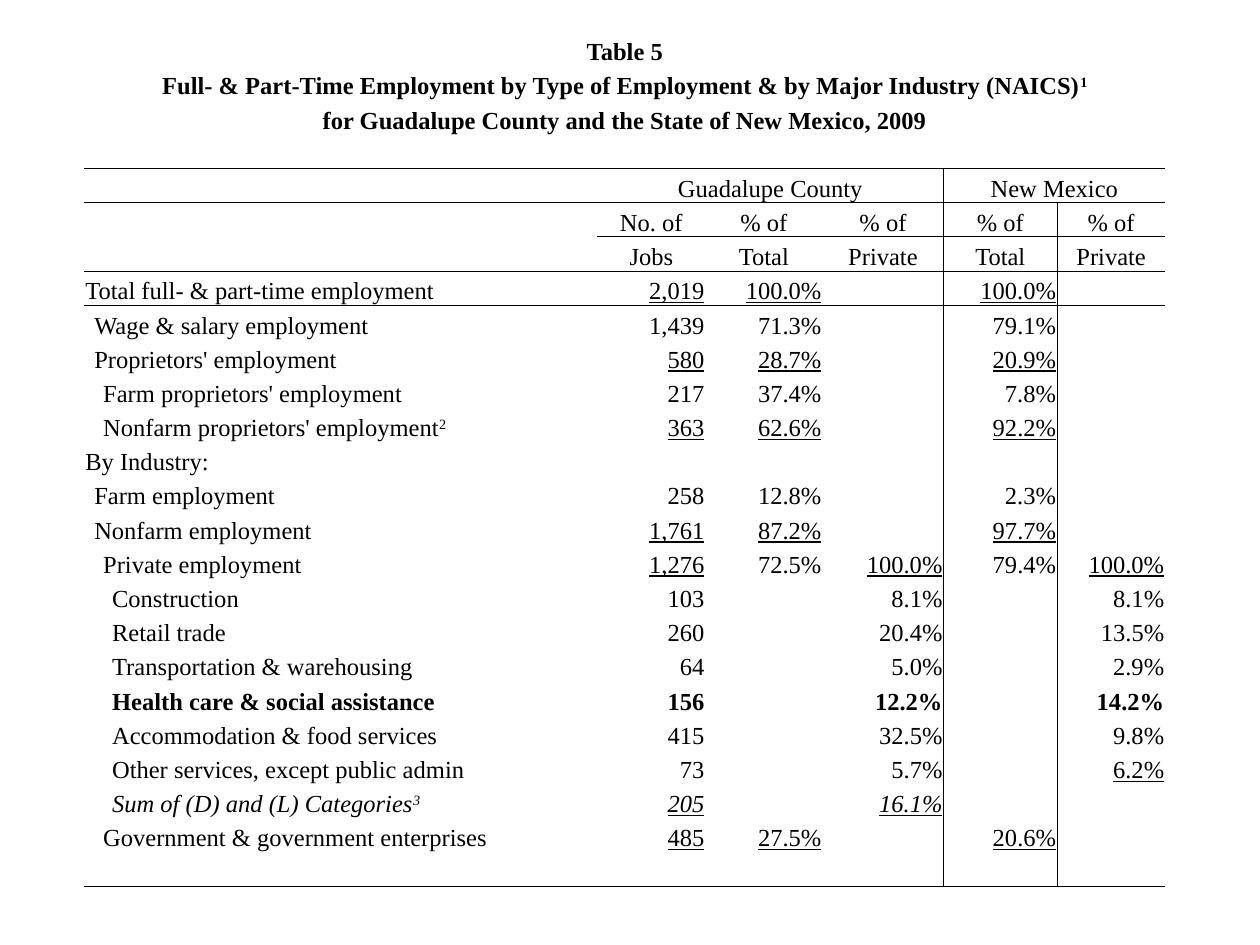
from lxml import etree
from pptx import Presentation
from pptx import util as u
from pptx.dml.color import RGBColor
from pptx.enum import text
from pptx.oxml import ns

BLACK = RGBColor(0, 0, 0)
FONT = "Times New Roman"
PLAIN_TABLE_STYLE = "{2D5ABB26-0587-4C30-8999-92F81FD0307C}"
CENTER, LEFT, RIGHT = text.PP_ALIGN.CENTER, text.PP_ALIGN.LEFT, text.PP_ALIGN.RIGHT

COLUMN_WIDTHS = [10.34, 2.18, 2.36, 2.44, 2.29, 2.18]
ROW_HEIGHT, LAST_HEIGHT = 0.69, 0.48
STATE_COLUMN = 4

# "^" starts a superscript
TITLES = [
    "Table 5",
    "Full- & Part-Time Employment by Type of Employment & by Major Industry (NAICS)^1",
    "for Guadalupe County and the State of New Mexico, 2009",
]
GROUP_ROW = len(TITLES) + 1
GROUPS = [(1, 3, "Guadalupe County"), (4, 5, "New Mexico")]
HEADINGS = [
    ["No. of", "% of", "% of", "% of", "% of"],
    ["Jobs", "Total", "Private", "Total", "Private"],
]
BODY_ROW = GROUP_ROW + 1 + len(HEADINGS)

# Indent level, label, values; "_" marks an underlined value
BODY = [
    (0, "Total full- & part-time employment", ["_2,019", "_100.0%", "", "_100.0%", ""]),
    (1, "Wage & salary employment", ["1,439", "71.3%", "", "79.1%", ""]),
    (1, "Proprietors' employment", ["_580", "_28.7%", "", "_20.9%", ""]),
    (2, "Farm proprietors' employment", ["217", "37.4%", "", "7.8%", ""]),
    (2, "Nonfarm proprietors' employment^2", ["_363", "_62.6%", "", "_92.2%", ""]),
    (0, "By Industry:", [""] * 5),
    (1, "Farm employment", ["258", "12.8%", "", "2.3%", ""]),
    (1, "Nonfarm employment", ["_1,761", "_87.2%", "", "_97.7%", ""]),
    (2, "Private employment", ["_1,276", "72.5%", "_100.0%", "79.4%", "_100.0%"]),
    (3, "Construction", ["103", "", "8.1%", "", "8.1%"]),
    (3, "Retail trade", ["260", "", "20.4%", "", "13.5%"]),
    (3, "Transportation & warehousing", ["64", "", "5.0%", "", "2.9%"]),
    (3, "Health care & social assistance", ["156", "", "12.2%", "", "14.2%"]),
    (3, "Accommodation & food services", ["415", "", "32.5%", "", "9.8%"]),
    (3, "Other services, except public admin", ["73", "", "5.7%", "", "_6.2%"]),
    (3, "Sum of (D) and (L) Categories^3", ["_205", "", "_16.1%", "", ""]),
    (2, "Government & government enterprises", ["_485", "_27.5%", "", "_20.6%", ""]),
]
BOLD_ROW = "Health care"
ITALIC_ROW = "Sum of"
CLOSING_ROW = BODY_ROW + len(BODY)
ROW_COUNT = CLOSING_ROW + 2


def format_cell(cell, size):
    """Clear the fill and give the cell its margins and base font."""
    cell.fill.background()
    cell.vertical_anchor = text.MSO_ANCHOR.BOTTOM
    cell.margin_left = cell.margin_right = cell.margin_top = u.Cm(0.02)
    cell.margin_bottom = 0
    paragraph = cell.text_frame.paragraphs[0]
    paragraph.font.size = u.Pt(size)
    paragraph.font.name = FONT
    paragraph.font.color.rgb = BLACK
    # The end mark sets the height of an empty cell
    end_mark = etree.SubElement(paragraph._p, ns.qn("a:endParaRPr"))
    end_mark.set("sz", str(size * 100))


def write(cell, words, align, bold=False, italic=False, indent=0):
    cell.margin_left = u.Cm(0.02 + 0.18 * indent)
    paragraph = cell.text_frame.paragraphs[0]
    paragraph.alignment = align
    font = paragraph.font
    font.bold, font.italic = bold, italic
    font.underline = words.startswith("_")
    base, _, superscript = words.lstrip("_").partition("^")
    if base:
        paragraph.add_run().text = base
    if superscript:
        run = paragraph.add_run()
        run.text = superscript
        run._r.get_or_add_rPr().set("baseline", "30000")


def set_borders(cell, sides):
    """Draw thin lines on the sides named by letters of LRTB, in that order."""
    properties = cell._tc.get_or_add_tcPr()
    for position, side in enumerate(sides):
        line = etree.Element(ns.qn("a:ln" + side), w=str(u.Pt(0.5)))
        fill = etree.SubElement(line, ns.qn("a:solidFill"))
        etree.SubElement(fill, ns.qn("a:srgbClr"), val=str(BLACK))
        properties.insert(position, line)


def rule_sides(row, column):
    """Name the ruled sides of one cell."""
    ruled_below = {GROUP_ROW - 1, BODY_ROW - 1, CLOSING_ROW}
    if column > 0:
        ruled_below.add(GROUP_ROW)
    beside_divider = GROUP_ROW <= row <= CLOSING_ROW
    sides = ""
    if beside_divider and column == STATE_COLUMN:
        sides += "L"
    if beside_divider and column == STATE_COLUMN - 1:
        sides += "R"
    if row - 1 in ruled_below:
        sides += "T"
    if row in ruled_below:
        sides += "B"
    return sides


def fill_headings(table):
    for row, title in enumerate(TITLES):
        table.cell(row, 0).merge(table.cell(row, len(COLUMN_WIDTHS) - 1))
        write(table.cell(row, 0), title, CENTER, bold=True)
    for first, last, name in GROUPS:
        table.cell(GROUP_ROW, first).merge(table.cell(GROUP_ROW, last))
        write(table.cell(GROUP_ROW, first), name, CENTER)
    for row, headings in enumerate(HEADINGS, GROUP_ROW + 1):
        for column, heading in enumerate(headings, 1):
            write(table.cell(row, column), heading, CENTER)


def fill_body(table):
    for row, (indent, label, values) in enumerate(BODY, BODY_ROW):
        bold, italic = label.startswith(BOLD_ROW), label.startswith(ITALIC_ROW)
        write(table.cell(row, 0), label, LEFT, bold, italic, indent)
        for column, value in enumerate(values, 1):
            write(table.cell(row, column), value, RIGHT, bold, italic)


def add_employment_table(slide, left, top, width, height):
    frame = slide.shapes.add_table(ROW_COUNT, len(COLUMN_WIDTHS), left, top, width, height)
    table = frame.table
    table.first_row = table.horz_banding = False
    table._tbl.tblPr.find(ns.qn("a:tableStyleId")).text = PLAIN_TABLE_STYLE
    for column, column_width in zip(table.columns, COLUMN_WIDTHS):
        column.width = u.Cm(column_width)
    for row in table.rows:
        row.height = u.Cm(ROW_HEIGHT)
    table.rows[ROW_COUNT - 1].height = u.Cm(LAST_HEIGHT)
    for row in range(ROW_COUNT):
        for column in range(len(COLUMN_WIDTHS)):
            cell = table.cell(row, column)
            format_cell(cell, 10 if row == ROW_COUNT - 1 else 14)
            set_borders(cell, rule_sides(row, column))
    fill_headings(table)
    fill_body(table)


def main():
    presentation = Presentation()
    presentation.slide_width, presentation.slide_height = u.Cm(25.4), u.Cm(19.05)
    slide = presentation.slides.add_slide(presentation.slide_layouts[6])
    table_height = ROW_HEIGHT * (ROW_COUNT - 1) + LAST_HEIGHT
    add_employment_table(slide, u.Cm(1.7), u.Cm(0.64), u.Cm(sum(COLUMN_WIDTHS)), u.Cm(table_height))
    presentation.save("out.pptx")


if __name__ == "__main__":
    main()
